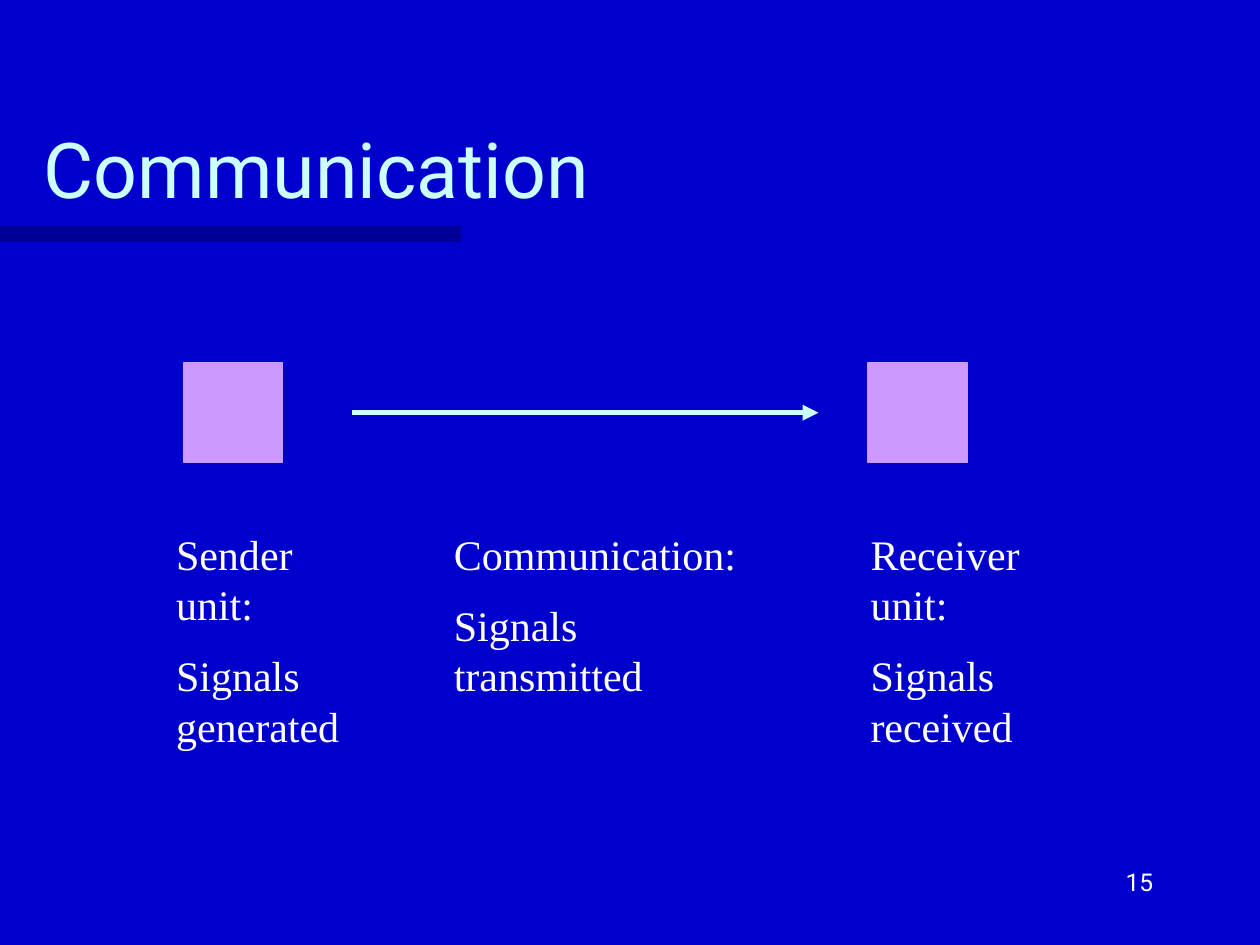
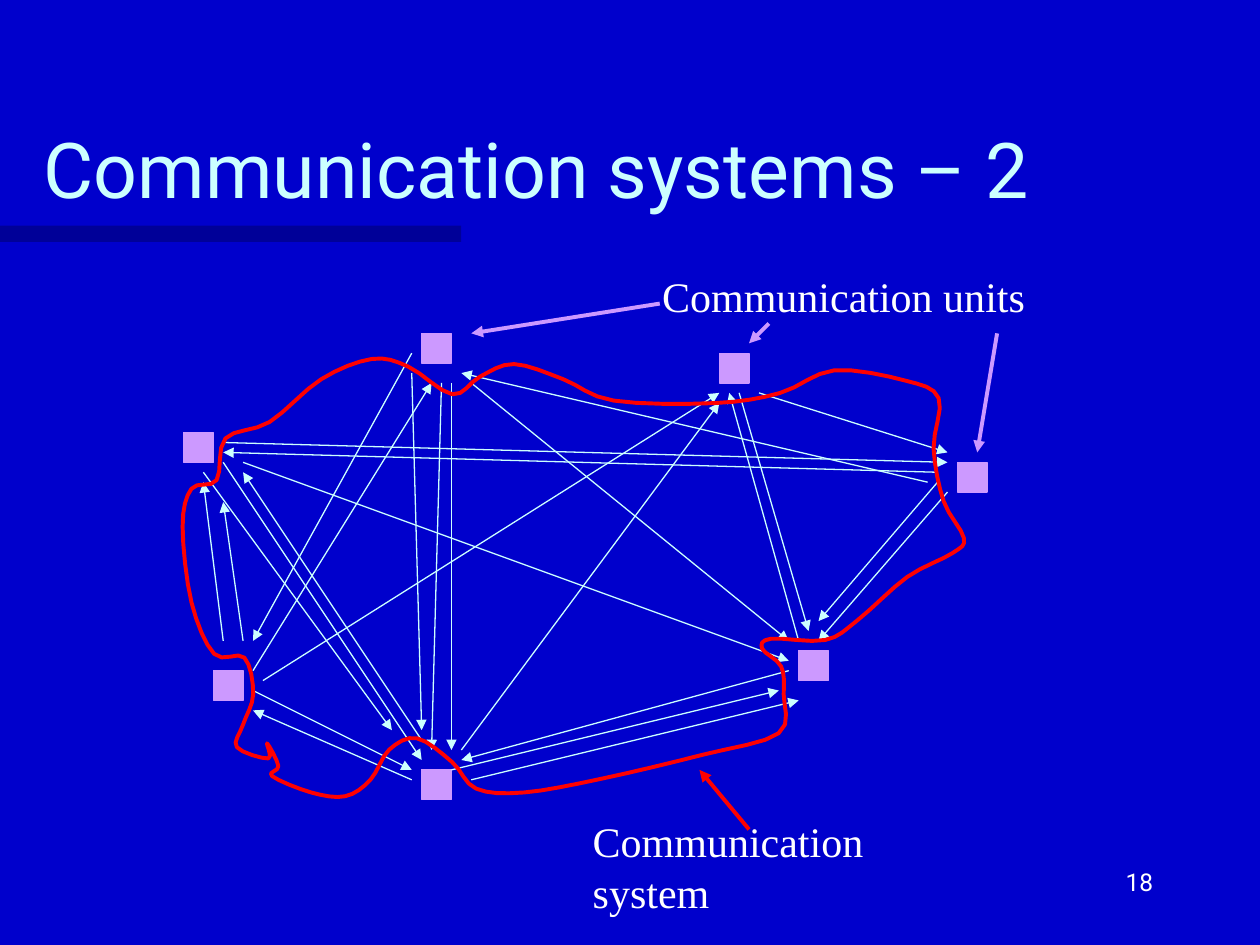
from dataclasses import dataclass

from lxml import etree
from pptx import Presentation
from pptx import util as u
from pptx.dml.color import RGBColor
from pptx.enum import shapes, text
from pptx.oxml import ns


@dataclass(frozen=True)
class Theme:
    background: str = "0000CC"
    band: str = "000066"
    title: str = "CCFFFF"
    body: str = "FFFFFF"
    unit: str = "CC99FF"
    signal: str = "CCFFFF"
    system: str = "FF0000"
    sans: str = "Roboto"
    serif: str = "Times New Roman"
    title_size: int = 44
    body_size: int = 24
    number_size: int = 14
    thin: float = 0.75
    medium: float = 2.25
    thick: float = 3


theme = Theme()
BLANK_LAYOUT = 6

presentation = Presentation()
presentation.slide_width, presentation.slide_height = u.Inches(10), u.Inches(7.5)


# Diagram grid: 2 mm cells with a small margin at the left and the top
def cell(column, row):
    return u.Mm(1 + 2 * column), u.Mm(1.2 + 2 * row)


def add_text(slide, box, lines, font, size, color, align=text.PP_ALIGN.LEFT,
             anchor=text.MSO_ANCHOR.TOP):
    frame = slide.shapes.add_textbox(*box).text_frame
    frame.word_wrap = True
    frame.vertical_anchor = anchor
    frame.text = "\n".join(lines)
    for index, paragraph in enumerate(frame.paragraphs):
        paragraph.alignment = align
        if index:
            paragraph.space_before = u.Pt(size / 2)
        for run in paragraph.runs:
            run.font.name, run.font.size = font, u.Pt(size)
            run.font.color.rgb = RGBColor.from_string(color)


# Slide contents: squares are (column, row), arrows are (from, to),
# labels are (column, row, width, height, lines), all in grid cells
communication = dict(
    title="Communication", number="15", unit_cells=10,
    units=[(18, 36), (87, 36)],
    arrows=[(theme.signal, theme.thick, [(35, 41, 82, 41)])],
    callouts=[],
    labels=[
        (16, 52, 22, 24, ["Sender unit:", "Signals generated"]),
        (86, 52, 22, 24, ["Receiver unit:", "Signals received"]),
        (44, 52, 31, 19, ["Communication:", "Signals transmitted"]),
    ],
    outline=[],
)

systems = dict(
    title="Communication systems – 2", number="18", unit_cells=3,
    units=[(18, 43), (21, 67), (42, 33), (72, 35), (96, 46), (80, 65), (42, 77)],
    arrows=[(theme.signal, theme.thin, [
        # From the left unit
        (22, 46, 42, 76), (22, 44, 95, 46), (24, 46, 79, 66), (20, 47, 39, 73),
        # From the lower left unit
        (25, 69, 41, 77), (22, 64, 20, 48), (24, 64, 22, 50),
        (25, 67, 43, 38), (26, 68, 72, 39),
        # From the upper left unit
        (44, 38, 43, 75), (45, 38, 45, 75), (41, 37, 42, 73),
        (47, 38, 79, 64), (41, 35, 25, 64),
        # From the upper right unit
        (74, 39, 81, 63), (76, 39, 95, 45),
        # From the right unit
        (95, 49, 82, 64), (94, 47, 22, 45), (94, 48, 82, 62), (93, 48, 46, 37),
        # From the lower right unit
        (79, 67, 46, 76), (80, 64, 73, 39),
        # From the bottom unit
        (45, 77, 78, 69), (47, 78, 80, 70), (46, 75, 72, 40),
        (42, 74, 24, 47), (41, 78, 25, 71),
    ])],
    callouts=[
        (theme.system, theme.medium, [(75, 83, 70, 77)]),
        (theme.unit, theme.medium,
         [(66, 30, 47, 33), (77, 32, 75, 34), (100, 33, 98, 45)]),
    ],
    labels=[
        (58, 81, 40, 11.5, ["Communication system"]),
        (65, 26, 49, 6.5, ["Communication units"]),
    ],
    # Border of the system, clockwise from the lower left unit, in inches
    outline=[
        (1.93, 5.75), (2.01, 5.51), (1.94, 5.22), (1.7, 5.19), (1.52, 4.78),
        (1.45, 4.18), (1.52, 3.88), (1.72, 3.81), (1.79, 3.48), (2.14, 3.35),
        (2.55, 3.01), (2.95, 2.85), (3.24, 2.91), (3.59, 3.13), (3.81, 2.99),
        (4.08, 2.89), (4.47, 3.01), (4.87, 3.18), (5.67, 3.2), (6.19, 3.12),
        (6.62, 2.94), (7.18, 3.02), (7.45, 3.16), (7.41, 3.56), (7.49, 3.98),
        (7.65, 4.27), (7.56, 4.39), (7.2, 4.58), (6.81, 4.92), (6.55, 5.08),
        (6.12, 5.07), (6.05, 5.15), (6.2, 5.29), (6.22, 5.51), (6.18, 5.82),
        (5.58, 5.99), (4.78, 6.18), (4.16, 6.29), (3.78, 6.26), (3.59, 6.05),
        (3.31, 5.86), (3.09, 5.95), (2.94, 6.19), (2.74, 6.32), (2.47, 6.29),
        (2.16, 6.16), (2.21, 6.08), (2.12, 5.9), (2.13, 6.02), (1.88, 5.93),
    ],
)

for content in (communication, systems):
    slide = presentation.slides.add_slide(presentation.slide_layouts[BLANK_LAYOUT])
    slide.background.fill.solid()
    slide.background.fill.fore_color.rgb = RGBColor.from_string(theme.background)

    # Half-transparent band under the title
    band = slide.shapes.add_shape(shapes.MSO_SHAPE.RECTANGLE, 0, u.Inches(1.79),
                                  u.Inches(3.66), u.Inches(0.13))
    band.shadow.inherit = False
    band.fill.solid()
    band.fill.fore_color.rgb = RGBColor.from_string(theme.band)
    band.line.fill.background()
    band_color = band._element.spPr.find(".//" + ns.qn("a:srgbClr"))
    etree.SubElement(band_color, ns.qn("a:alpha"), val="50000")

    # Slide number and title
    add_text(slide, [u.Inches(n) for n in (7.17, 6.83, 2.08, 0.5)], [content["number"]],
             theme.sans, theme.number_size, theme.body, align=text.PP_ALIGN.RIGHT)
    add_text(slide, [u.Inches(n) for n in (0.25, 0.5, 8.5, 1.25)], [content["title"]],
             theme.sans, theme.title_size, theme.title, anchor=text.MSO_ANCHOR.BOTTOM)

    # Units
    side = u.Mm(2 * content["unit_cells"])
    for column, row in content["units"]:
        unit = slide.shapes.add_shape(shapes.MSO_SHAPE.RECTANGLE, *cell(column, row),
                                      side, side)
        unit.shadow.inherit = False
        unit.fill.solid()
        unit.fill.fore_color.rgb = RGBColor.from_string(theme.unit)
        unit.line.color.rgb = RGBColor.from_string(theme.unit)
        unit.line.width = u.Pt(theme.thin)

    # Signals and callouts
    for color, width, arrows in content["arrows"] + content["callouts"]:
        for x1, y1, x2, y2 in arrows:
            arrow = slide.shapes.add_connector(shapes.MSO_CONNECTOR.STRAIGHT,
                                               *cell(x1, y1), *cell(x2, y2))
            arrow.line.color.rgb = RGBColor.from_string(color)
            arrow.line.width = u.Pt(width)
            line = arrow._element.spPr.find(ns.qn("a:ln"))
            etree.SubElement(line, ns.qn("a:tailEnd"), type="triangle")
            etree.SubElement(arrow._element.spPr, ns.qn("a:effectLst"))

    # Border of the system: a closed smooth curve through its points
    outline = content["outline"]
    if outline:
        curve = []
        for i in range(len(outline)):
            neighbours = [outline[(i + k) % len(outline)] for k in (-1, 0, 1, 2)]
            for t in (0, 0.25, 0.5, 0.75):
                curve.append(tuple(
                    u.Inches(b + t * (c - a) / 2
                             + t ** 2 * (2 * a - 5 * b + 4 * c - d) / 2
                             + t ** 3 * (3 * b - a - 3 * c + d) / 2)
                    for a, b, c, d in zip(*neighbours)))
        builder = slide.shapes.build_freeform(*curve[0])
        builder.add_line_segments(curve[1:], close=True)
        border = builder.convert_to_shape()
        border.shadow.inherit = False
        border.fill.background()
        border.line.color.rgb = RGBColor.from_string(theme.system)
        border.line.width = u.Pt(theme.medium)

    # Labels
    for column, row, width, height, lines in content["labels"]:
        add_text(slide, (*cell(column, row), u.Mm(2 * width), u.Mm(2 * height)), lines,
                 theme.serif, theme.body_size, theme.body)

presentation.save("out.pptx")
